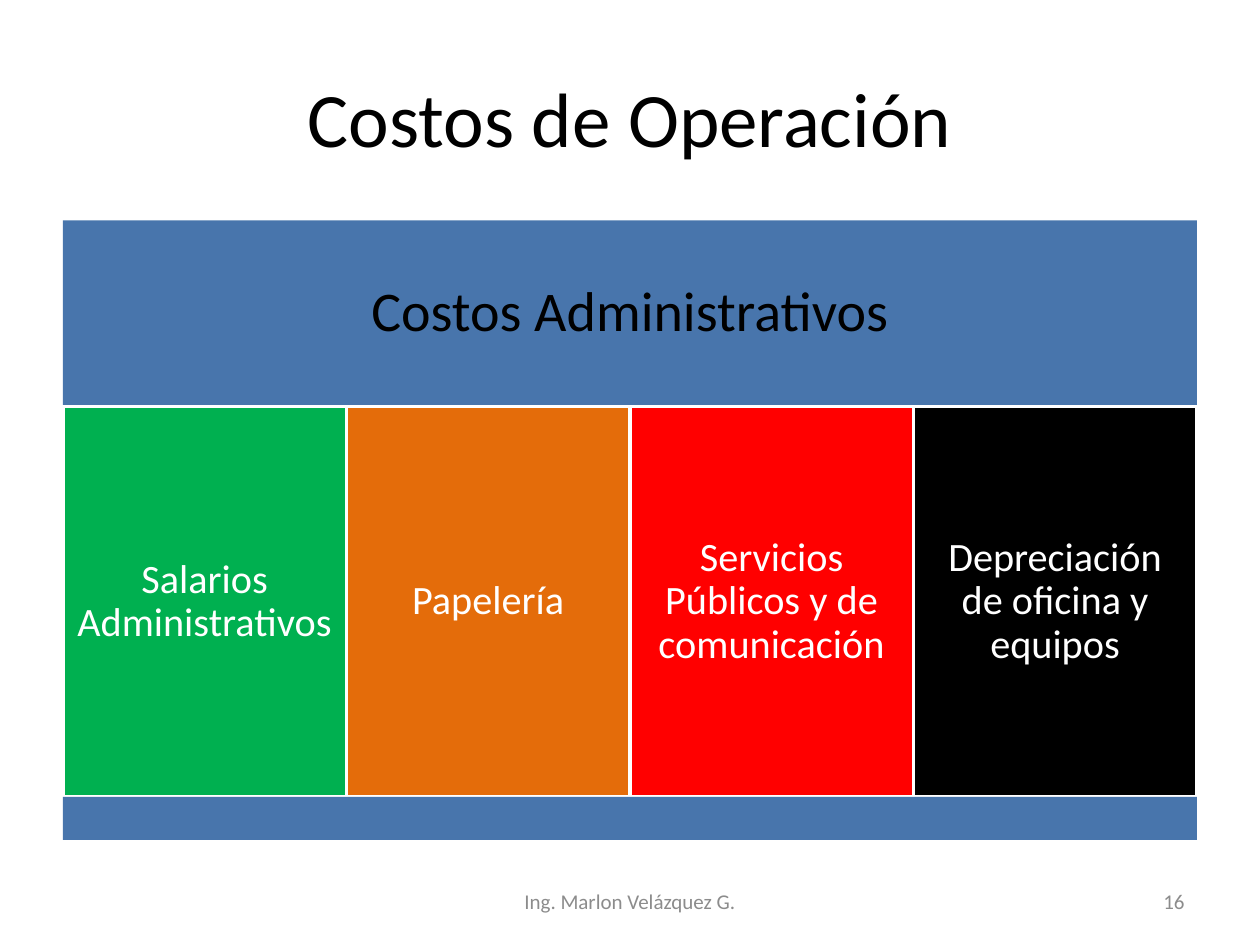
from dataclasses import dataclass

from pptx import Presentation
from pptx.dml.color import RGBColor
from pptx.enum.shapes import MSO_SHAPE
from pptx.enum.text import MSO_ANCHOR, PP_ALIGN
from pptx.shapes.base import BaseShape
from pptx.slide import Slide
from pptx.util import Pt


@dataclass(frozen=True)
class Theme:
    font: str = "Calibri"
    title_size: float = 44
    banner_size: float = 32
    cost_size: float = 23
    footer_size: float = 12
    ink: str = "000000"
    paper: str = "FFFFFF"
    muted: str = "8C8C8C"
    band: str = "4875AC"
    green: str = "00B050"
    orange: str = "E46C0A"
    red: str = "FF0000"


@dataclass(frozen=True)
class Area:
    left: float
    top: float
    width: float
    height: float


@dataclass(frozen=True)
class Label:
    text: str
    size: float
    color: str
    margin: float = 7.2
    align: PP_ALIGN = PP_ALIGN.CENTER
    line_spacing: float = 1.0


@dataclass(frozen=True)
class Cost:
    text: str
    fill: str


THEME = Theme()
LEFT, WIDTH = 36, 648
BANNER = Area(LEFT, 126, WIDTH, 106.3)
COSTS_TOP, COSTS_HEIGHT = 232.3, 223.2
BASE = Area(LEFT, 455.4, WIDTH, 24.6)
COSTS = (
    Cost("Salarios Administrativos", THEME.green),
    Cost("Papelería", THEME.orange),
    Cost("Servicios Públicos y de comunicación", THEME.red),
    Cost("Depreciación de oficina y equipos", THEME.ink),
)


def place(shape: BaseShape, area: Area) -> None:
    shape.left, shape.top = Pt(area.left), Pt(area.top)
    shape.width, shape.height = Pt(area.width), Pt(area.height)


def write(shape: BaseShape, label: Label) -> None:
    frame = shape.text_frame
    frame.text = label.text
    frame.word_wrap = True
    frame.vertical_anchor = MSO_ANCHOR.MIDDLE
    frame.margin_left = frame.margin_right = Pt(label.margin)
    frame.margin_top = frame.margin_bottom = Pt(label.margin)
    para = frame.paragraphs[0]
    para.alignment = label.align
    para.line_spacing = label.line_spacing
    span = para.runs[0]
    span.font.name = THEME.font
    span.font.size = Pt(label.size)
    span.font.color.rgb = RGBColor.from_string(label.color)


def add_block(page: Slide, area: Area, fill: str, outlined: bool = False) -> BaseShape:
    block = page.shapes.add_shape(MSO_SHAPE.RECTANGLE, 0, 0, 0, 0)
    place(block, area)
    block.shadow.inherit = False
    block.fill.solid()
    block.fill.fore_color.rgb = RGBColor.from_string(fill)
    if outlined:
        block.line.color.rgb = RGBColor.from_string(THEME.paper)
        block.line.width = Pt(2)
    else:
        block.line.fill.background()
    return block


def add_text(page: Slide, area: Area, label: Label) -> None:
    box = page.shapes.add_textbox(0, 0, 0, 0)
    place(box, area)
    write(box, label)


def main() -> None:
    deck = Presentation()
    deck.slide_width, deck.slide_height = Pt(720), Pt(540)
    page = deck.slides.add_slide(deck.slide_layouts[5])

    title = page.shapes.title
    place(title, Area(LEFT, 21.6, WIDTH, 90))
    write(title, Label("Costos de Operación", THEME.title_size, THEME.ink))

    banner = add_block(page, BANNER, THEME.band)
    write(banner, Label("Costos Administrativos", THEME.banner_size, THEME.ink,
                        margin=9.6, line_spacing=0.9))

    column = WIDTH / len(COSTS)
    for index, cost in enumerate(COSTS):
        area = Area(LEFT + index * column, COSTS_TOP, column, COSTS_HEIGHT)
        block = add_block(page, area, cost.fill, outlined=True)
        write(block, Label(cost.text, THEME.cost_size, THEME.paper,
                           margin=7, line_spacing=0.9))

    add_block(page, BASE, THEME.band)

    add_text(page, Area(246, 500.5, 228, 28.75),
             Label("Ing. Marlon Velázquez G.", THEME.footer_size, THEME.muted))
    add_text(page, Area(516, 500.5, 168, 28.75),
             Label("16", THEME.footer_size, THEME.muted, align=PP_ALIGN.RIGHT))

    deck.save("out.pptx")


if __name__ == "__main__":
    main()
